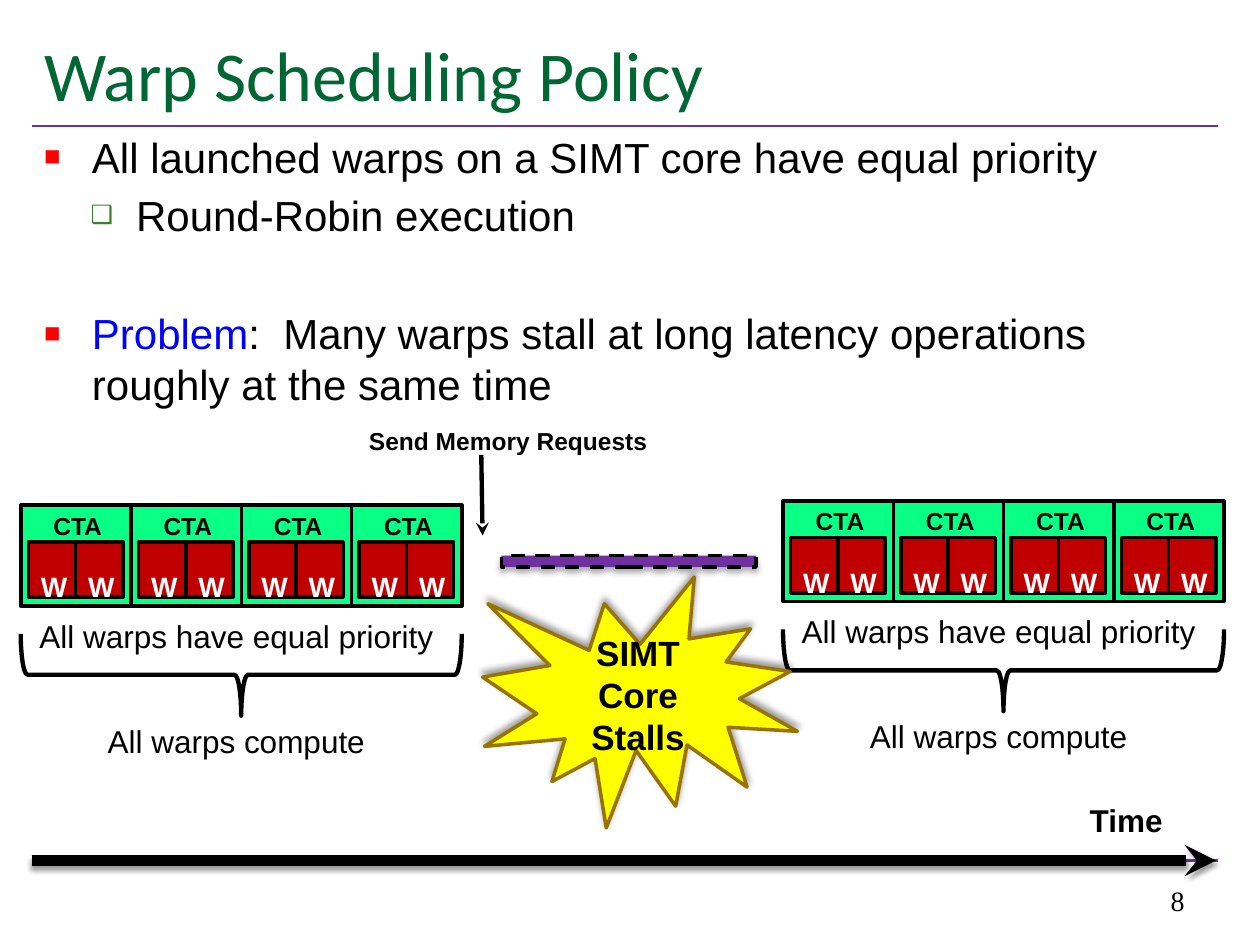
from lxml.etree import SubElement as Sub
from pptx import Presentation
from pptx.dml.color import RGBColor as Rgb
from pptx.enum.dml import MSO_LINE as Dash
from pptx.enum.shapes import MSO_CONNECTOR as Conn, MSO_SHAPE as Kind
from pptx.enum.text import MSO_ANCHOR as Anchor, MSO_AUTO_SIZE as Fit, PP_ALIGN as Align
from pptx.oxml.ns import qn
from pptx.util import Inches, Pt

COLS, ROWS = 100, 75
BLACK, PURPLE = "000000", "7030A0"
LEFT, MID, RIGHT = Align.LEFT, Align.CENTER, Align.RIGHT


def tint(code):
    return Rgb.from_string(code)


def put(item, vals):
    for key, val in vals.items():
        setattr(item, key, val)


class Deck:
    face = "Arial"

    def __init__(self):
        self.show = Presentation()
        put(self.show, {"slide_width": Inches(10), "slide_height": Inches(7.5)})
        self.slide = self.show.slides.add_slide(self.show.slide_layouts[1])
        self.home = self.slide.shapes

    def cell(self, col, row):
        return (round(self.show.slide_width * col / COLS),
                round(self.show.slide_height * row / ROWS))

    def area(self, col, row, wide, high):
        return self.cell(col, row) + self.cell(wide, high)

    def place(self, item, *box):
        put(item, dict(zip(("left", "top", "width", "height"), self.area(*box))))

    def group(self):
        self.home = self.slide.shapes.add_group_shape().shapes

    def leave(self):
        self.home = self.slide.shapes

    def run(self, para, text, size, color=BLACK, bold=False, face=None):
        piece = para.add_run()
        piece.text = text
        put(piece.font, {"size": Pt(size), "bold": bold, "name": face or self.face})
        piece.font.color.rgb = tint(color)

    def fill(self, item, text, size, align=LEFT, anchor=Anchor.TOP, **look):
        frame = item.text_frame
        put(frame, {"word_wrap": True, "vertical_anchor": anchor, "auto_size": Fit.NONE})
        para = frame.paragraphs[0]
        para.alignment = align
        self.run(para, text, size, **look)

    def label(self, box, text, size, **look):
        self.fill(self.home.add_textbox(*self.area(*box)), text, size, **look)

    def title(self, box, text):
        item = self.slide.shapes.title
        self.place(item, *box)
        self.fill(item, text, 40, anchor=Anchor.MIDDLE, color="006633", face="Calibri")

    def list(self, box, rows):
        item = self.slide.placeholders[1]
        self.place(item, *box)
        frame = item.text_frame
        put(frame, {"auto_size": Fit.NONE, "vertical_anchor": Anchor.TOP})
        for num, (level, gap, parts) in enumerate(rows):
            para = frame.add_paragraph() if num else frame.paragraphs[0]
            put(para, {"level": level, "space_before": Pt(gap), "alignment": LEFT})
            for text, color in parts:
                self.run(para, text, 24, color)
            self.bullet(para, level)

    def bullet(self, para, level):
        mark, color, size, edge, hang = (
            ("■", "FF0000", 65, 0.38, 0.38), ("❑", "3B812F", 60, 0.73, 0.36))[level]
        prop = para._p.get_or_add_pPr()
        prop.set("marL", str(Inches(edge)))
        prop.set("indent", str(-Inches(hang)))
        Sub(Sub(prop, qn("a:buClr")), qn("a:srgbClr"), val=color)
        Sub(prop, qn("a:buSzPct"), val=str(size * 1000))
        Sub(prop, qn("a:buFont"), typeface=self.face)
        Sub(prop, qn("a:buChar"), char=mark)

    def shade(self, effect, alpha, blur, dist, turn):
        cast = Sub(effect, qn("a:outerShdw"), blurRad=str(Pt(blur)), dist=str(Pt(dist)),
                   dir=str(turn * 60000), rotWithShape="0")
        color = Sub(cast, qn("a:srgbClr"), val=BLACK)
        Sub(color, qn("a:alpha"), val=str(alpha * 1000))

    def shape(self, kind, box, fill=None, edge=BLACK, width=2, dash=None, shade=None, turn=0):
        item = self.home.add_shape(kind, *self.area(*box))
        item.rotation = turn
        item.shadow.inherit = False
        if fill:
            item.fill.solid()
            item.fill.fore_color.rgb = tint(fill)
        else:
            item.fill.background()
        put(item.line, {"width": Pt(width), "dash_style": dash})
        item.line.color.rgb = tint(edge)
        if shade:
            self.shade(item._element.spPr.find(qn("a:effectLst")), *shade)
        return item

    def line(self, start, end, width, color=BLACK, head=False, shade=None):
        item = self.home.add_connector(Conn.STRAIGHT, *self.cell(*start), *self.cell(*end))
        item.line.width = Pt(width)
        item.line.color.rgb = tint(color)
        prop = item._element.spPr
        if head:
            Sub(prop.find(qn("a:ln")), qn("a:tailEnd"), type="stealth")
        effect = Sub(prop, qn("a:effectLst"))
        if shade:
            self.shade(effect, *shade)

    def warp(self, col, row):
        item = self.shape(Kind.RECTANGLE, (col, row, 3.75, 4.4), "C00000")
        self.fill(item, "W", 16, MID, color="FFFFFF", bold=True)
        item.text_frame.margin_top = Inches(0.22)

    def core(self, col, row):
        self.group()
        for num in range(4):
            left = col + num * 8.75
            self.shape(Kind.RECTANGLE, (left, row, 8.75, 8), "0AFF85")
            for step in (4.35, 0.6):
                self.warp(left + step, row + 2.9)
            self.label((left + 1.6, row - 0.05, 6, 3.4), "CTA", 14, bold=True)
        self.shape(Kind.LEFT_BRACE, (col + 14.25, row - 4.05, 6.5, 35), width=2.5, turn=270)
        self.label((col + 2.5, row + 16.7, 29.2, 4), "All warps compute", 18, align=MID)
        self.leave()
        self.label((col + 0.5, row + 8.35, 35, 4), "All warps have equal priority", 18)


def main():
    deck = Deck()
    for row in (68.3, 10):
        deck.line((2.5, row), (96.7, row), 1.5, PURPLE)
    deck.title((2.5, 1.7, 94.2, 8.3), "Warp Scheduling Policy")
    deck.list((2.5, 9.9, 94.2, 27.6), (
        (0, 4.8, [("All launched warps on a SIMT core have equal priority", BLACK)]),
        (1, 4.8, [("Round-Robin execution", BLACK)]),
        (0, 38.5, [("Problem", "0000FF"),
                   (":  Many warps stall at long latency operations "
                    "roughly at the same time", BLACK)])))
    deck.label((71.7, 68.3, 23.3, 5), "8", 16, align=RIGHT, anchor=Anchor.BOTTOM,
               face="Times New Roman")
    for col, row in ((1.65, 40.1), (62.15, 39.75)):
        deck.core(col, row)
    deck.label((28.3, 33.3, 24.2, 3.4), "Send Memory Requests", 14, bold=True)
    burst = deck.shape(Kind.EXPLOSION1, (38.3, 45.8, 25, 19.9), "FFFF00", "997300",
                       shade=(40, 4, 3, 270))
    deck.fill(burst, "SIMT Core Stalls", 20, MID, Anchor.MIDDLE, bold=True)
    deck.line((2.5, 68.3), (96.5, 68.3), 6, head=True, shade=(38, 3.1, 1.6, 90))
    deck.label((85.5, 63.1, 17.5, 4), "Time", 18, bold=True)
    deck.line((38.2, 36.1), (38.3, 42.5), 2.5, head=True)
    deck.shape(Kind.RECTANGLE, (39.8, 44.1, 20.2, 0.9), PURPLE, dash=Dash.DASH,
               shade=(32, 3.5, 2.2, 90))
    deck.show.save("out.pptx")


if __name__ == "__main__":
    main()
